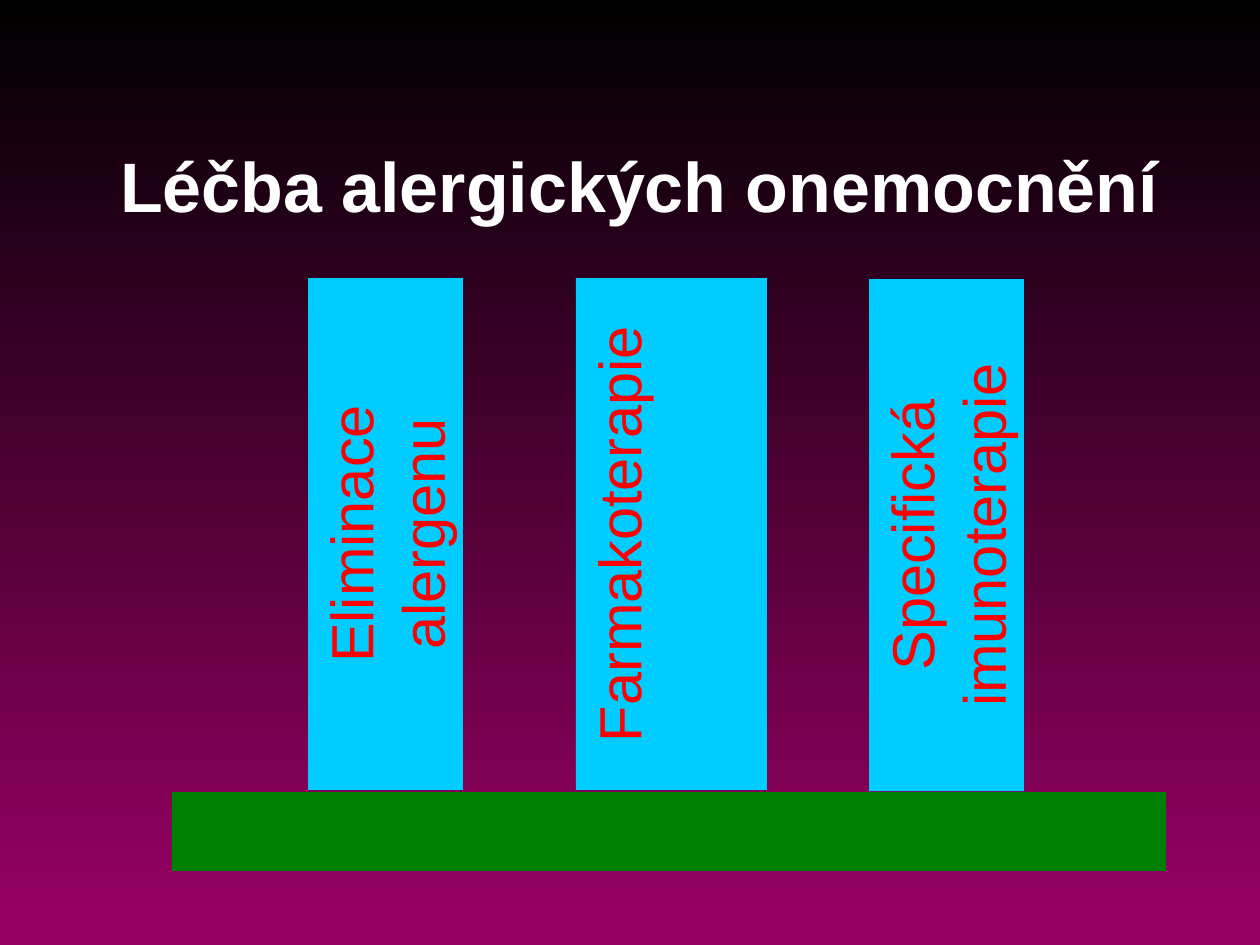
from pptx import Presentation
from pptx.dml.color import RGBColor
from pptx.enum.shapes import MSO_SHAPE
from pptx.enum.text import MSO_ANCHOR, MSO_AUTO_SIZE, PP_ALIGN
from pptx.util import Pt

RECT = MSO_SHAPE.RECTANGLE
TOP, BOTTOM = MSO_ANCHOR.TOP, MSO_ANCHOR.BOTTOM
CENTER = PP_ALIGN.CENTER
NO_FIT = MSO_AUTO_SIZE.NONE

# Content; lengths in px
TITLE = "Léčba alergických onemocnění"
PILLARS = [  # text, left, top, width as seen upright
    ("Eliminace alergenu", 308, 278, 155),
    ("Farmakoterapie", 576, 278, 191),
    ("Specifická imunoterapie", 869, 279, 155),
]
TALL = 512
BASE = (172, 792, 994, 79)
HEAD = (0, 76, 1260, 157)

THEME = {
    "font": "Arial",
    "sky": "000000", "ground": "990066",
    "title": "FFFFFF", "title_size": 40,
    "pillar": "00CCFF", "label": "FF0000", "label_size": 34,
    "base": "008000",
}


def px(n):
    return round(n * 914400 / 126)


def color(key):
    return RGBColor.from_string(THEME[key])


def write(shape, text, key, size, bold, anchor, insets):
    frame = shape.text_frame
    frame.word_wrap = True
    frame.auto_size = NO_FIT
    frame.vertical_anchor = anchor
    (frame.margin_left, frame.margin_top,
     frame.margin_right, frame.margin_bottom) = map(px, insets)
    para = frame.paragraphs[0]
    para.alignment = CENTER
    para.line_spacing = 1.0
    run = para.add_run()
    run.text = text
    font = run.font
    font.name, font.size, font.bold = THEME["font"], Pt(THEME[size]), bold
    font.color.rgb = color(key)


def add_rect(slide, box, key):
    shape = slide.shapes.add_shape(RECT, *map(px, box))
    shape.shadow.inherit = False
    shape.fill.solid()
    shape.fill.fore_color.rgb = color(key)
    shape.line.fill.background()
    return shape


def main():
    deck = Presentation()
    deck.slide_width, deck.slide_height = px(1260), px(945)
    slide = deck.slides.add_slide(deck.slide_layouts[5])

    # Background, dark at the top
    fill = slide.background.fill
    fill.gradient()
    fill.gradient_angle = 270
    for stop, key, pos in zip(fill.gradient_stops, ("sky", "ground"), (0, 1)):
        stop.color.rgb = color(key)
        stop.position = pos

    # Title
    title = slide.shapes.title
    title.left, title.top, title.width, title.height = map(px, HEAD)
    write(title, TITLE, "title", "title_size", True, BOTTOM, (31, 6, 13, 6))

    # Base and the pillars, turned about their centres
    add_rect(slide, BASE, "base")
    for text, left, top, wide in PILLARS:
        shift = (TALL - wide) / 2
        pillar = add_rect(slide, (left - shift, top + shift, TALL, wide), "pillar")
        pillar.rotation = 270
        write(pillar, text, "label", "label_size", False, TOP, (13, 6, 13, 0))

    deck.save("out.pptx")


if __name__ == "__main__":
    main()
